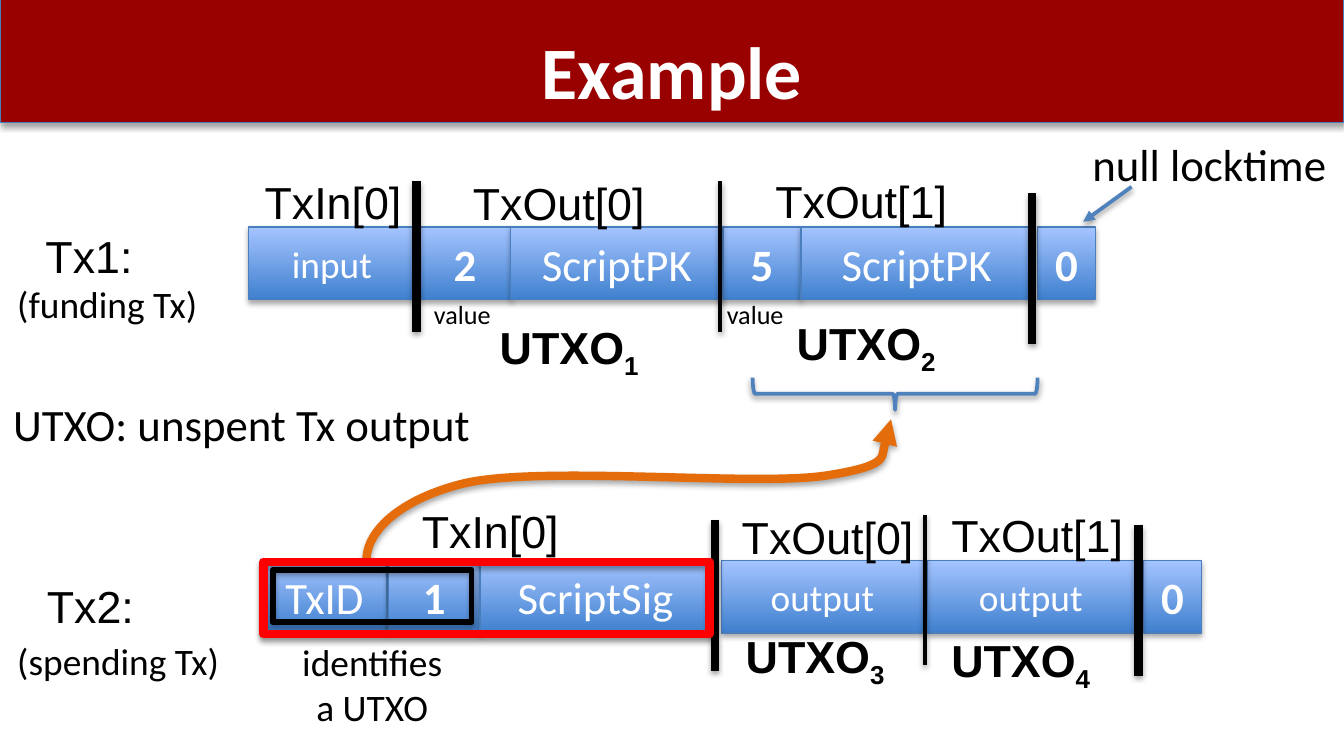
from lxml.etree import SubElement
from pptx import Presentation
from pptx.dml.color import RGBColor
from pptx.enum.shapes import MSO_CONNECTOR, MSO_SHAPE
from pptx.enum.text import MSO_ANCHOR, PP_ALIGN
from pptx.oxml.ns import qn
from pptx.util import Inches, Pt

BLACK = RGBColor(0x00, 0x00, 0x00)
WHITE = RGBColor(0xFF, 0xFF, 0xFF)
RED = RGBColor(0xFF, 0x00, 0x00)
MAROON = RGBColor(0x99, 0x00, 0x00)
ORANGE = RGBColor(0xE4, 0x6C, 0x0A)
BLUE = RGBColor(0x4F, 0x81, 0xBD)
EDGE = RGBColor(0x4B, 0x7E, 0xBC)
DARK = RGBColor(0x3F, 0x80, 0xCE)
LIGHT = RGBColor(0xA4, 0xC4, 0xFF)


def write(frame, text, size=24, font="Calibri", color=BLACK, bold=False,
          align=PP_ALIGN.LEFT, sub=""):
    para = frame.paragraphs[0]
    para.text = text
    para.alignment = align
    if sub:
        low = para.add_run()
        low.text = sub
        low.font._element.set("baseline", "-25000")
    for run in para.runs:
        run.font.size = Pt(size)
        run.font.name = font
        run.font.bold = bold
        run.font.color.rgb = color


class Board:
    def __init__(self, slide):
        self.slide = slide
        self.shapes = slide.shapes

    def shade(self, shape, alpha=35, drop=1.8):
        props = shape._element.spPr
        for old in props.findall(qn("a:effectLst")):
            props.remove(old)
        cast = SubElement(SubElement(props, qn("a:effectLst")), qn("a:outerShdw"),
                          blurRad=str(Pt(3.1)), dist=str(Pt(drop)),
                          dir="5400000", rotWithShape="0")
        tone = SubElement(cast, qn("a:srgbClr"), val=str(BLACK))
        SubElement(tone, qn("a:alpha"), val=str(alpha * 1000))

    def stroke(self, shape, color, width, head=False):
        shape.line.color.rgb = color
        shape.line.width = Pt(width)
        if head:
            SubElement(shape.line._get_or_add_ln(), qn("a:tailEnd"), type="triangle")

    def shape(self, kind, left, top, width, height, color=EDGE, weight=0.75):
        item = self.shapes.add_shape(kind, Inches(left), Inches(top),
                                     Inches(width), Inches(height))
        item.fill.background()
        self.stroke(item, color, weight)
        self.shade(item)
        return item

    def banner(self, text):
        back = self.shape(MSO_SHAPE.RECTANGLE, 0, -0.01, 10, 0.92)
        back.fill.solid()
        back.fill.fore_color.rgb = MAROON
        title = self.shapes.title
        self.shapes._spTree.append(title._element)
        title.left, title.top = Inches(0.5), Inches(0.14)
        title.width, title.height = Inches(9), Inches(0.68)
        title.text_frame.word_wrap = False
        title.text_frame.vertical_anchor = MSO_ANCHOR.TOP
        write(title.text_frame, text, size=39.6, color=WHITE, bold=True,
              align=PP_ALIGN.CENTER)

    def cell(self, left, top, width, text):
        item = self.shape(MSO_SHAPE.RECTANGLE, left, top, width, 0.54)
        item.fill.gradient()
        item.fill.gradient_angle = 90
        for stop, color in zip(item.fill.gradient_stops, (DARK, LIGHT)):
            stop.color.rgb = color
        item.text_frame.vertical_anchor = MSO_ANCHOR.MIDDLE
        write(item.text_frame, text, size=20 if text.islower() else 24,
              color=WHITE, bold=text.isdigit(), align=PP_ALIGN.CENTER)

    def line(self, start, end, color=BLACK, width=2, head=False):
        item = self.shapes.add_connector(MSO_CONNECTOR.STRAIGHT,
                                         *map(Inches, start + end))
        self.stroke(item, color, width, head)
        self.shade(item, alpha=38, drop=1.6)

    def bar(self, x, top, width):
        self.line((x, top), (x, top + 1.12), width=width)

    def label(self, left, top, width, height, text, **style):
        item = self.shapes.add_textbox(Inches(left), Inches(top),
                                       Inches(width), Inches(height))
        item.text_frame.word_wrap = False
        write(item.text_frame, text, **style)

    def brace(self, left, top, width, height):
        item = self.shape(MSO_SHAPE.LEFT_BRACE, left, top, width, height, BLUE, 2)
        item.rotation = 270
        self.shade(item, alpha=38, drop=1.6)

    def curve(self, start, points):
        pen = self.shapes.build_freeform(Inches(start[0]), Inches(start[1]))
        pen.add_line_segments([(Inches(x), Inches(y)) for x, y in points], close=False)
        item = pen.convert_to_shape()
        steps = list(item._element.iter(qn("a:lnTo")))
        for first in range(0, len(steps), 3):
            trio = steps[first:first + 3]
            trail = trio[0].getparent()
            bend = SubElement(trail, qn("a:cubicBezTo"))
            for step in trio:
                bend.append(step[0])
                trail.remove(step)
        item.fill.background()
        self.stroke(item, ORANGE, 4.5, head=True)
        self.shade(item)


def main():
    deck = Presentation()
    deck.slide_width = Inches(10)
    deck.slide_height = deck.slide_width * 9 // 16
    board = Board(deck.slides.add_slide(deck.slide_layouts[5]))
    board.banner("Example")

    board.curve((2.79, 4.36), [
        (2.59, 4.07), (2.88, 3.74), (3.44, 3.6),
        (4, 3.46), (5.6, 3.62), (6.14, 3.54),
        (6.67, 3.46), (6.63, 3.12), (6.63, 3.12)])
    board.brace(6.54, 1.87, 0.24, 2.12)

    rows = (
        (1.69, ((3.12, 0.68, "2"), (3.8, 1.58, "ScriptPK"), (5.38, 0.58, "5"),
                (5.96, 1.72, "ScriptPK"), (1.85, 1.24, "input"), (7.72, 0.43, "0"))),
        (4.17, ((1.95, 0.93, "TxID"), (5.37, 1.5, "output"), (6.9, 1.54, "output"),
                (2.89, 0.68, "1"), (3.57, 1.72, "ScriptSig"), (8.51, 0.43, "0"))),
    )
    for top, cells in rows:
        for left, width, text in cells:
            board.cell(left, top, width, text)

    for x, top, width in ((3.1, 1.35, 4.5), (5.36, 1.35, 2), (7.68, 1.44, 4.5),
                          (5.32, 3.87, 4.5), (6.88, 3.83, 2), (8.47, 3.91, 4.5)):
        board.bar(x, top, width)
    board.line((8.42, 1.39), (8.06, 1.65), color=BLUE, head=True)

    board.shape(MSO_SHAPE.RECTANGLE, 2.03, 4.24, 1.48, 0.39, BLACK, 3)
    board.shape(MSO_SHAPE.RECTANGLE, 1.96, 4.18, 3.32, 0.54, RED, 4.5)

    for left, top, width, text in (
            (1.87, 1.25, 1.23, "TxIn[0]"), (3.42, 1.26, 1.49, "TxOut[0]"),
            (5.67, 1.24, 1.49, "TxOut[1]"), (0.24, 1.65, 0.86, "Tx1:"),
            (3.04, 3.7, 1.23, "TxIn[0]"), (5.42, 3.74, 1.49, "TxOut[0]"),
            (6.98, 3.73, 1.49, "TxOut[1]"), (0.25, 4.26, 0.86, "Tx2:")):
        board.label(left, top, width, 0.5, text, font="Arial")

    spots = ((3.62, 2.33), (5.83, 2.3), (5.45, 4.63), (6.98, 4.66))
    for index, (left, top) in enumerate(spots, 1):
        board.label(left, top, 1.26, 0.5, "UTXO", font="Arial", bold=True,
                    sub=str(index))

    board.label(8.03, 0.97, 1.96, 0.5, "null locktime")
    board.label(0, 2.9, 3.63, 0.5, "UTXO: unspent Tx output")
    for left in (3.13, 5.31):
        board.label(left, 2.17, 0.63, 0.34, "value", size=14)
    board.label(0.03, 2.04, 1.55, 0.44, "(funding Tx)", size=20)
    board.label(0.03, 4.7, 1.72, 0.44, "(spending Tx)", size=20)
    board.label(2.14, 4.71, 1.26, 0.77, "identifies\na UTXO", size=20,
                align=PP_ALIGN.CENTER)

    deck.save("out.pptx")


if __name__ == "__main__":
    main()
